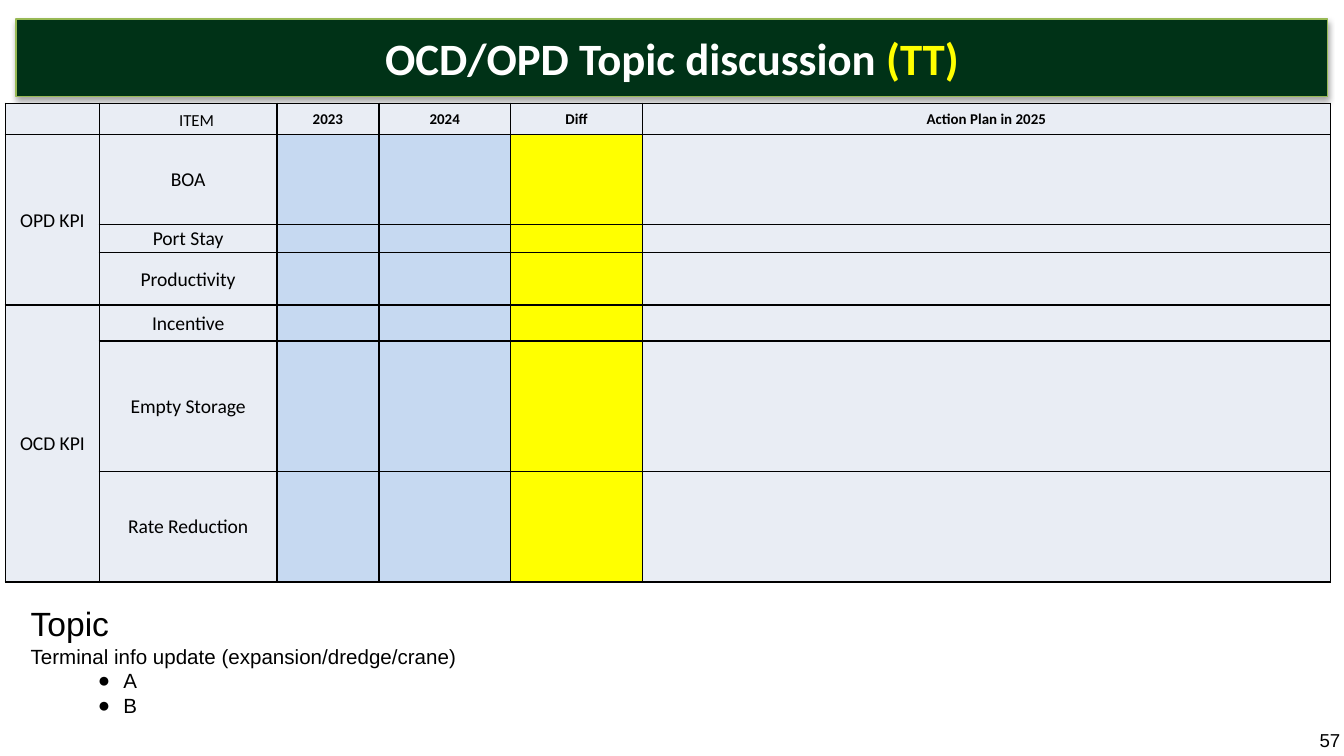
import pptx
import pptx.util
import pptx.oxml
import pptx.oxml.ns
import pptx.dml.color
import pptx.enum.text
from lxml import etree

Inches, Pt = pptx.util.Inches, pptx.util.Pt
RGBColor = pptx.dml.color.RGBColor
PP_ALIGN = pptx.enum.text.PP_ALIGN
MSO_ANCHOR = pptx.enum.text.MSO_ANCHOR
MSO_AUTO_SIZE = pptx.enum.text.MSO_AUTO_SIZE
qn = pptx.oxml.ns.qn

# Colours
BLACK = RGBColor(0x00, 0x00, 0x00)
WHITE = RGBColor(0xFF, 0xFF, 0xFF)
YELLOW = RGBColor(0xFF, 0xFF, 0x00)
DARK_GREEN = RGBColor(0x00, 0x32, 0x17)
LIGHT_GREEN = RGBColor(0x98, 0xB9, 0x55)
PALE = RGBColor(0xE9, 0xED, 0xF4)
BLUE = RGBColor(0xC6, 0xD9, 0xF1)

# Content
TITLE = [("OCD/OPD Topic discussion ", WHITE), ("(TT)", YELLOW)]
HEADER = ["", "　ITEM", "2023", "2024", "Diff", "Action Plan in 2025"]
KPIS = [
    ("OPD KPI", ["BOA", "Port Stay", "Productivity"]),
    ("OCD KPI", ["Incentive", "Empty Storage", "Rate Reduction"]),
]
COL_WIDTHS = [0.7, 1.32, 0.76, 0.98, 0.98, 5.12]
ROW_HEIGHTS = [0.23, 0.67, 0.21, 0.39, 0.27, 0.97, 0.82]
COL_FILLS = [PALE, PALE, BLUE, BLUE, YELLOW, PALE]
TOPIC = "Topic"
TOPIC_LINE = "Terminal info update (expansion/dredge/crane)"
TOPIC_BULLETS = ["A", "B"]
PAGE = "57"

A_NS = 'xmlns:a="http://schemas.openxmlformats.org/drawingml/2006/main"'
SHADOW = (f'<a:effectLst {A_NS}><a:outerShdw blurRad="{Pt(3.1)}" dist="{Pt(1.8)}" '
          'dir="5400000" rotWithShape="0"><a:srgbClr val="000000">'
          '<a:alpha val="35000"/></a:srgbClr></a:outerShdw></a:effectLst>')


def add_run(p, text, size, font="Arial", color=BLACK, bold=False):
    r = p.add_run()
    r.text = text
    r.font.size = Pt(size)
    r.font.name = font
    r.font.bold = bold
    r.font.color.rgb = color


def add_borders(cell):
    tcPr = cell._tc.get_or_add_tcPr()
    for i, side in enumerate(("lnL", "lnR", "lnT", "lnB")):
        tcPr.insert(i, pptx.oxml.parse_xml(
            f'<a:{side} {A_NS} w="{Pt(1)}"><a:solidFill><a:srgbClr val="000000"/>'
            f'</a:solidFill></a:{side}>'))


def format_cell(cell, text, fill, size, bold):
    cell.margin_left = cell.margin_right = cell.margin_top = Inches(0.01)
    cell.margin_bottom = 0
    cell.vertical_anchor = MSO_ANCHOR.MIDDLE
    cell.fill.solid()
    cell.fill.fore_color.rgb = fill
    add_borders(cell)
    p = cell.text_frame.paragraphs[0]
    p.alignment = PP_ALIGN.CENTER
    if text:
        add_run(p, text, size, font="Calibri", bold=bold)
    else:
        # Small empty text keeps the row at its height
        etree.SubElement(p._p, qn("a:endParaRPr"), sz="800")


# Slide in 16:9
prs = pptx.Presentation()
prs.slide_width = Inches(10)
prs.slide_height = prs.slide_width * 9 // 16
s = prs.slides.add_slide(prs.slide_layouts[5])

# Title bar
title = s.shapes.title
title.left, title.top = Inches(0.12), Inches(0.14)
title.width, title.height = Inches(9.76), Inches(0.58)
title.fill.solid()
title.fill.fore_color.rgb = DARK_GREEN
title.line.color.rgb = LIGHT_GREEN
title.line.width = Pt(0.75)
title._element.spPr.append(pptx.oxml.parse_xml(SHADOW))
tf = title.text_frame
tf.auto_size = MSO_AUTO_SIZE.NONE
tf.vertical_anchor = MSO_ANCHOR.MIDDLE
tf.margin_left = tf.margin_right = tf.margin_top = tf.margin_bottom = 0
tf.paragraphs[0].alignment = PP_ALIGN.CENTER
for text, color in TITLE:
    add_run(tf.paragraphs[0], text, 24, font="Calibri", color=color, bold=True)

# KPI table
rows = [HEADER]
for kpi, items in KPIS:
    for i, item in enumerate(items):
        rows.append([kpi if i == 0 else "", item, "", "", "", ""])
table = s.shapes.add_table(len(rows), len(HEADER), Inches(0.04), Inches(0.77),
                           Inches(sum(COL_WIDTHS)), Inches(sum(ROW_HEIGHTS))).table
for col, width in zip(table.columns, COL_WIDTHS):
    col.width = Inches(width)
for row, height in zip(table.rows, ROW_HEIGHTS):
    row.height = Inches(height)
for i, row in enumerate(rows):
    for j, text in enumerate(row):
        header = i == 0
        size = 10.5 if not header else 9 if j == 1 else 8
        format_cell(table.cell(i, j), text, PALE if header else COL_FILLS[j],
                    size, bold=header and j > 1)
first = 1
for kpi, items in KPIS:
    last = first + len(items) - 1
    table.cell(first, 0).merge(table.cell(last, 0))
    first = last + 1

# Page number
tf = s.shapes.add_textbox(Inches(9.72), Inches(5.39), Inches(0.64), Inches(0.23)).text_frame
tf.word_wrap = True
tf.vertical_anchor = MSO_ANCHOR.MIDDLE
add_run(tf.paragraphs[0], PAGE, 10)

# Topic notes
tf = s.shapes.add_textbox(Inches(0.13), Inches(4.44), Inches(9.76), Inches(1.33)).text_frame
tf.word_wrap = True
tf.auto_size = MSO_AUTO_SIZE.SHAPE_TO_FIT_TEXT
add_run(tf.paragraphs[0], TOPIC, 18)
add_run(tf.add_paragraph(), TOPIC_LINE, 11)
for text in TOPIC_BULLETS:
    p = tf.add_paragraph()
    p.level = 1
    add_run(p, text, 11)
    pPr = p._p.get_or_add_pPr()
    pPr.set("marL", str(Inches(0.69)))
    pPr.set("indent", str(Inches(-0.19)))
    etree.SubElement(pPr, qn("a:buFont"), typeface="Arial")
    etree.SubElement(pPr, qn("a:buChar"), char="●")

prs.save("out.pptx")
